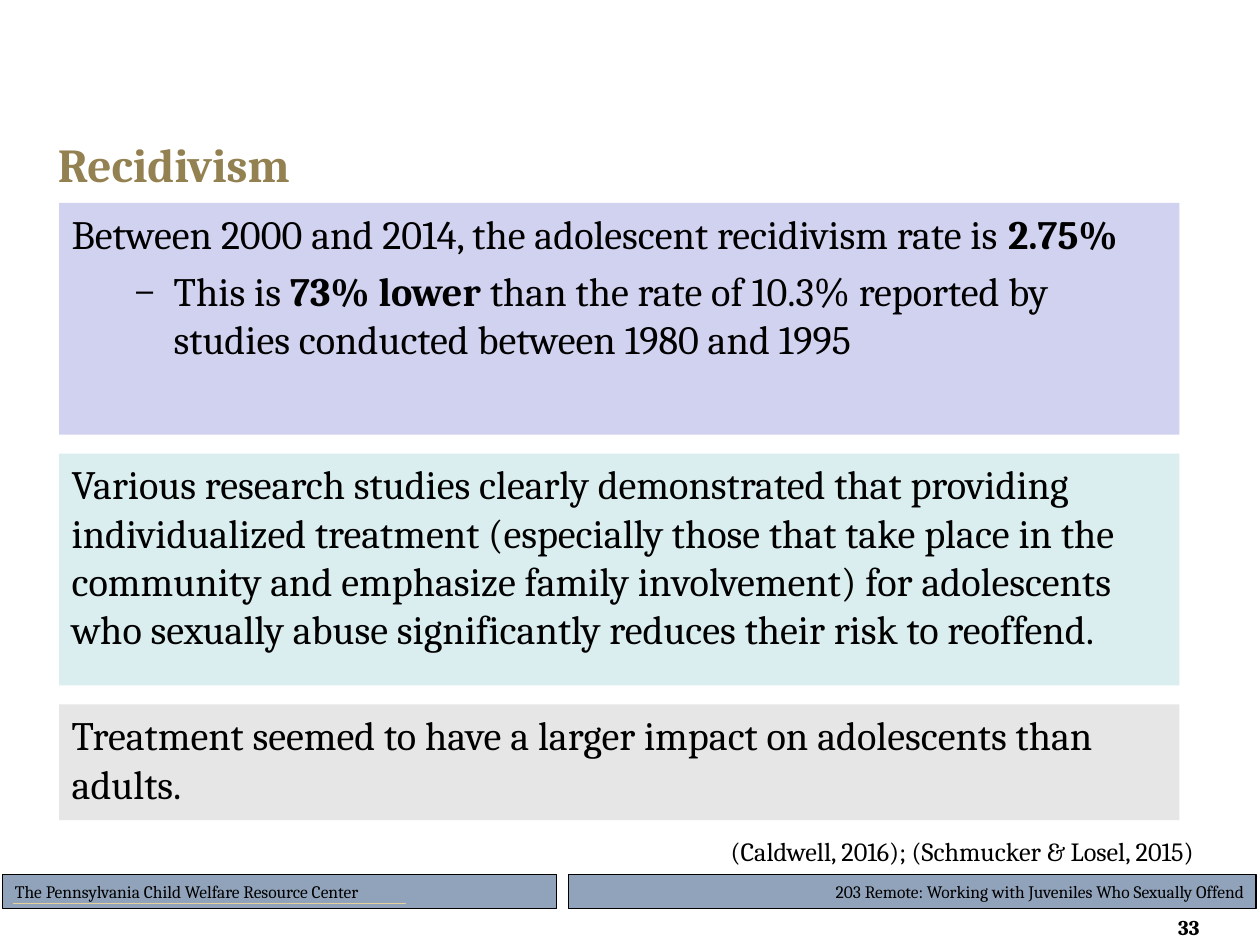
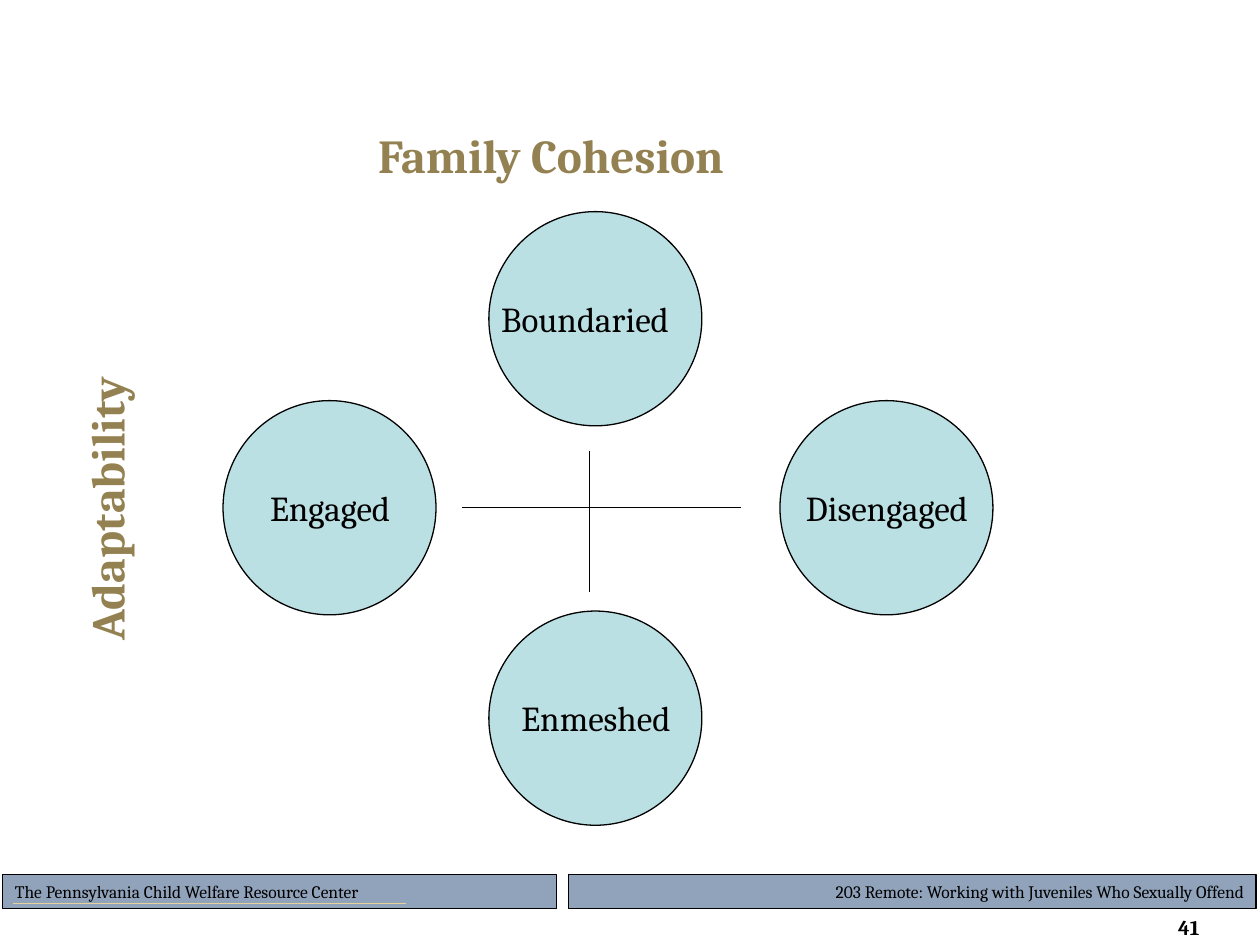
from lxml import etree
from pptx import Presentation
from pptx.dml.color import RGBColor as Rgb
from pptx.enum.shapes import MSO_CONNECTOR as Conn, MSO_SHAPE as Form
from pptx.enum.text import MSO_ANCHOR as Anchor, MSO_AUTO_SIZE as Fit, PP_ALIGN as Align
from pptx.oxml.ns import qn
from pptx.util import Inches, Pt

FONT = "Cambria"
HUES = {
    "ink": "000000",
    "title": "948151",
    "band": "91A3BB",
    "rule": "E5D199",
    "lilac": "D1D1F0",
    "mint": "DAEDEF",
    "grey": "E6E6E6",
    "disc": "BBE0E3",
}


def hue(name):
    """Return the named colour."""
    return Rgb.from_string(HUES[name])


def style(para, size, color="ink", bold=False, align=Align.LEFT):
    """Format a paragraph and all its runs."""
    para.alignment = align
    for run in para.runs:
        font = run.font
        font.name, font.size = FONT, Pt(size)
        font.color.rgb = hue(color)
        if font.bold is None:
            font.bold = bold


def write(shape, text, size, anchor=Anchor.TOP, **look):
    """Put one styled paragraph into a shape."""
    frame = shape.text_frame
    frame.word_wrap, frame.auto_size = True, Fit.NONE
    frame.vertical_anchor = anchor
    frame.text = text
    style(frame.paragraphs[0], size, **look)
    return frame


def place(shape, box):
    """Move a shape to left, top, width, height in inches."""
    shape.left, shape.top, shape.width, shape.height = map(Inches, box)


def label(slide, box, text, size, **look):
    """Add a plain text box."""
    area = slide.shapes.add_textbox(*map(Inches, box))
    write(area, text, size, **look)
    return area


def block(slide, form, box, fill, line=None):
    """Add a filled preset shape, outlined if a line width is given."""
    shape = slide.shapes.add_shape(form, *map(Inches, box))
    shape.shadow.inherit = False
    shape.fill.solid()
    shape.fill.fore_color.rgb = hue(fill)
    if line:
        shape.line.color.rgb = hue("ink")
        shape.line.width = Pt(line)
    else:
        shape.line.fill.background()
    return shape


def stroke(slide, ends, color="ink"):
    """Add a thin straight line."""
    line = slide.shapes.add_connector(Conn.STRAIGHT, *map(Inches, ends))
    line.line.color.rgb = hue(color)
    line.line.width = Pt(0.75)
    etree.SubElement(line._element.spPr, qn("a:effectLst"))


def mixed(para, parts):
    """Fill a paragraph with text parts, every second one bold."""
    for place_no, text in enumerate(parts):
        run = para.add_run()
        run.text = text
        run.font.bold = place_no % 2 == 1


def dash(para, left, hang):
    """Give a paragraph a hanging dash bullet."""
    props = para._p.get_or_add_pPr()
    props.set("marL", str(Inches(left)))
    props.set("indent", str(-Inches(hang)))
    etree.SubElement(props, qn("a:buFont")).set("typeface", FONT)
    etree.SubElement(props, qn("a:buChar")).set("char", "–")


def start(deck, title, box, page):
    """Add a slide with its title, footer bands and page number."""
    slide = deck.slides.add_slide(deck.slide_layouts[5])
    bands = [
        (4.51, 5.46, 0.75, Align.RIGHT, "203 Remote: Working with Juveniles Who Sexually Offend"),
        (0.02, 4.4, 0.5, Align.LEFT, "The Pennsylvania Child Welfare Resource Center"),
    ]
    for left, width, line, align, text in bands:
        band = block(slide, Form.RECTANGLE, (left, 6.94, width, 0.27), "band", line)
        write(band, text, 10, Anchor.MIDDLE, align=align)
    stroke(slide, (0.1, 7.17, 3.22, 7.17), "rule")
    number = label(slide, (8.81, 7.21, 0.95, 0.3), str(page), 12, bold=True, align=Align.RIGHT)
    number.text_frame.margin_right = Inches(0.24)
    head = slide.shapes.title
    place(head, box)
    write(head, title, 27, Anchor.MIDDLE, color="title", bold=True)
    return slide


def panel(slide, top, height, fill, text=""):
    """Add a full-width text panel and return its text frame."""
    shape = block(slide, Form.RECTANGLE, (0.47, top, 8.89, height), fill)
    return write(shape, text, 23)


def rates(deck):
    """Build the recidivism slide."""
    slide = start(deck, "Recidivism", (0.36, 0.97, 9, 0.65), 33)
    frame = panel(slide, 1.61, 1.84, "lilac")
    lead, sub = frame.paragraphs[0], frame.add_paragraph()
    mixed(lead, ["Between 2000 and 2014, the adolescent recidivism rate is ", "2.75%"])
    mixed(sub, ["This is ", "73% lower ",
                "than the rate of 10.3% reported by studies conducted between 1980 and 1995"])
    dash(sub, 0.81, 0.31)
    sub.space_before = Pt(5)
    for para in (lead, sub):
        style(para, 23)
    panel(slide, 3.6, 1.84, "mint",
          "Various research studies clearly demonstrated that providing individualized treatment "
          "(especially those that take place in the community and emphasize family involvement) "
          "for adolescents who sexually abuse significantly reduces their risk to reoffend.")
    panel(slide, 5.59, 0.92, "grey",
          "Treatment seemed to have a larger impact on adolescents than adults.")
    label(slide, (5.7, 6.58, 4.3, 0.4), "(Caldwell, 2016); (Schmucker & Losel, 2015)", 15)


def bonds(deck):
    """Build the family cohesion slide."""
    slide = start(deck, "Family Cohesion", (2.9, 0.92, 3.56, 0.61), 41)
    discs = [
        ("Boundaried", 3.88, 1.68, Align.LEFT),
        ("Engaged", 1.77, 3.18, Align.CENTER),
        ("Enmeshed", 3.88, 4.85, Align.CENTER),
        ("Disengaged", 6.19, 3.18, Align.CENTER),
    ]
    for text, left, top, align in discs:
        block(slide, Form.OVAL, (left, top, 1.69, 1.7), "disc", 0.75)
        label(slide, (left, top + 0.63, 1.7, 0.44), text, 20, align=align)
    stroke(slide, (4.68, 3.58, 4.68, 4.7))
    stroke(slide, (3.67, 4.03, 5.88, 4.03))
    side = label(slide, (-0.94, 3.73, 3.56, 0.61), "Adaptability", 27, anchor=Anchor.MIDDLE,
                 color="title", bold=True, align=Align.CENTER)
    side.rotation = 270


def main():
    """Build and save the deck."""
    deck = Presentation()
    deck.slide_width, deck.slide_height = Inches(10), Inches(7.5)
    rates(deck)
    bonds(deck)
    deck.save("out.pptx")


if __name__ == "__main__":
    main()
